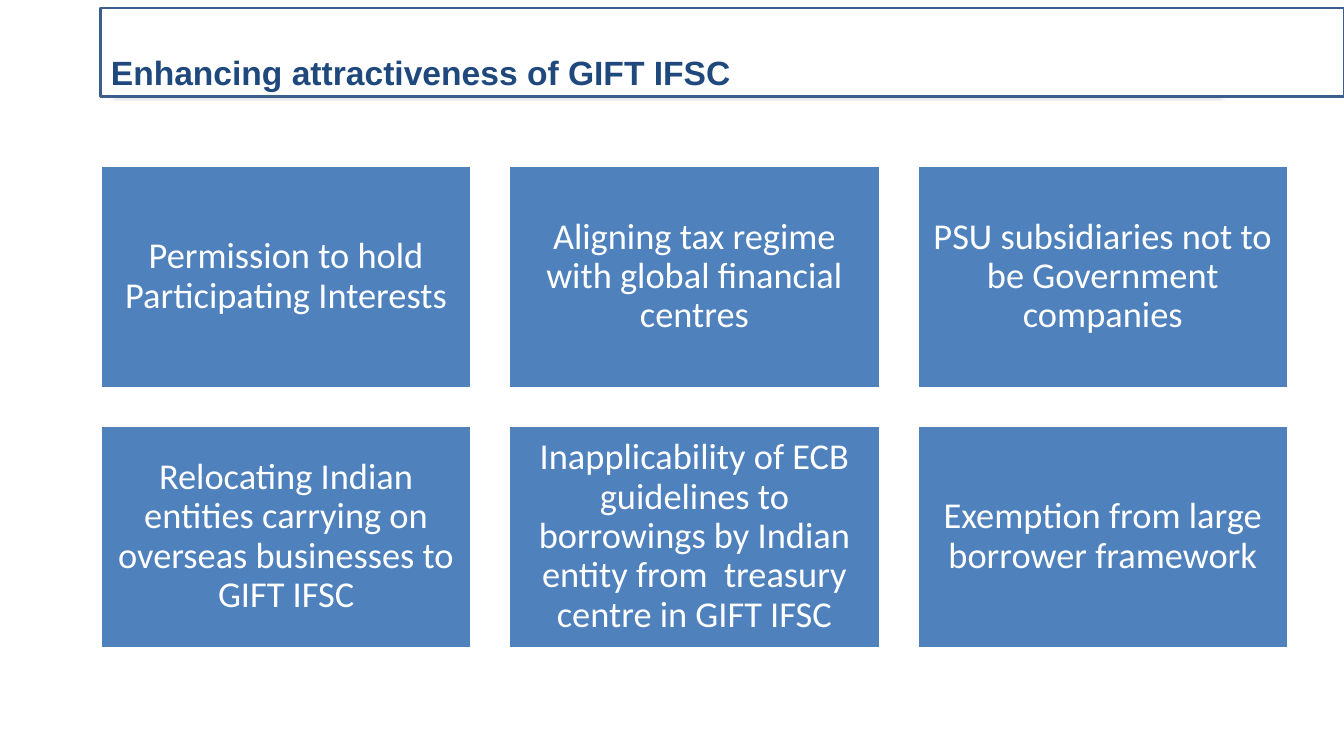
from dataclasses import dataclass

from lxml.etree import SubElement
from pptx import Presentation
from pptx.dml.color import RGBColor as RGB
from pptx.enum.shapes import MSO_CONNECTOR as Connector, MSO_SHAPE as Shape
from pptx.enum.text import MSO_ANCHOR as Anchor, MSO_AUTO_SIZE as AutoSize, PP_ALIGN as Align
from pptx.oxml.ns import qn
from pptx.util import Cm, Pt

HEADING = "Enhancing attractiveness of GIFT IFSC"
MEASURES = [
    "Permission to hold Participating Interests",
    "Aligning tax regime with global financial centres",
    "PSU subsidiaries not to be Government companies",
    "Relocating Indian entities carrying on overseas businesses to GIFT IFSC",
    "Inapplicability of ECB guidelines to borrowings by Indian entity from  treasury centre in GIFT IFSC",
    "Exemption from large borrower framework",
]


@dataclass(frozen=True)
class Theme:
    white: RGB = RGB(0xFF, 0xFF, 0xFF)
    blue: RGB = RGB(0x4F, 0x81, 0xBD)
    navy: RGB = RGB(0x1F, 0x49, 0x7D)
    border: RGB = RGB(0x3A, 0x5F, 0x8C)
    heading_size: Pt = Pt(24)
    measure_size: Pt = Pt(26)
    outline: Pt = Pt(2)


THEME = Theme()
COLUMNS = 3
LEFT, TOP = Cm(2.54), Cm(4.17)
WIDTH, HEIGHT, GAP = Cm(9.35), Cm(5.61), Cm(0.94)
INSET = Cm(0.28)

HEADING_FONT = {"name": "Arial", "size": THEME.heading_size, "bold": True}
HEADING_PARAGRAPH = {"alignment": Align.LEFT, "space_after": Pt(6)}
HEADING_FRAME = {"word_wrap": True, "auto_size": AutoSize.NONE, "vertical_anchor": Anchor.BOTTOM}
MEASURE_FONT = {"name": "Calibri", "size": THEME.measure_size, "bold": False}
MEASURE_PARAGRAPH = {"alignment": Align.CENTER, "line_spacing": 0.9}
MEASURE_FRAME = {
    "word_wrap": True, "vertical_anchor": Anchor.MIDDLE,
    "margin_left": INSET, "margin_right": INSET, "margin_top": INSET, "margin_bottom": INSET,
}


def apply(target, values):
    for key, value in values.items():
        setattr(target, key, value)


def paint(panel, fill, line):
    panel.fill.solid()
    panel.fill.fore_color.rgb = fill
    panel.line.color.rgb = line
    panel.line.width = THEME.outline


def write(panel, text, frame, paragraph, font, color):
    panel.text_frame.text = text
    apply(panel.text_frame, frame)
    line = panel.text_frame.paragraphs[0]
    apply(line, paragraph)
    apply(line.font, font)
    line.font.color.rgb = color


def add_rule(slide):
    rule = slide.shapes.add_connector(Connector.STRAIGHT, Cm(2.82), Cm(2.34), Cm(30.76), Cm(2.34))
    rule.line.color.rgb = THEME.blue
    rule.line.width = THEME.outline
    effects = SubElement(rule._element.spPr, qn("a:effectLst"))
    shadow = SubElement(effects, qn("a:outerShdw"), blurRad=str(Pt(3.1)), dist=str(Pt(1.6)),
                        dir="5400000", rotWithShape="0")
    black = SubElement(shadow, qn("a:srgbClr"), val="000000")
    SubElement(black, qn("a:alpha"), val="38000")
    slide.shapes._spTree.insert(2, rule._element)


def add_heading(slide):
    heading = slide.shapes.title
    apply(heading, {"left": LEFT, "top": Cm(0.2), "width": Cm(31.33), "height": Cm(2.24)})
    paint(heading, THEME.white, THEME.border)
    write(heading, HEADING, HEADING_FRAME, HEADING_PARAGRAPH, HEADING_FONT, THEME.navy)


def add_measures(slide):
    for index, measure in enumerate(MEASURES):
        row, column = divmod(index, COLUMNS)
        card = slide.shapes.add_shape(Shape.RECTANGLE, LEFT + column * (WIDTH + GAP),
                                      TOP + row * (HEIGHT + GAP), WIDTH, HEIGHT)
        card.shadow.inherit = False
        paint(card, THEME.blue, THEME.white)
        write(card, measure, MEASURE_FRAME, MEASURE_PARAGRAPH, MEASURE_FONT, THEME.white)


def main():
    """Build the slide of measures for GIFT IFSC."""
    deck = Presentation()
    apply(deck, {"slide_width": Cm(33.87), "slide_height": Cm(19.05)})
    slide = deck.slides.add_slide(deck.slide_layouts.get_by_name("Title Only"))
    add_rule(slide)
    add_heading(slide)
    add_measures(slide)
    deck.save("out.pptx")


if __name__ == "__main__":
    main()
